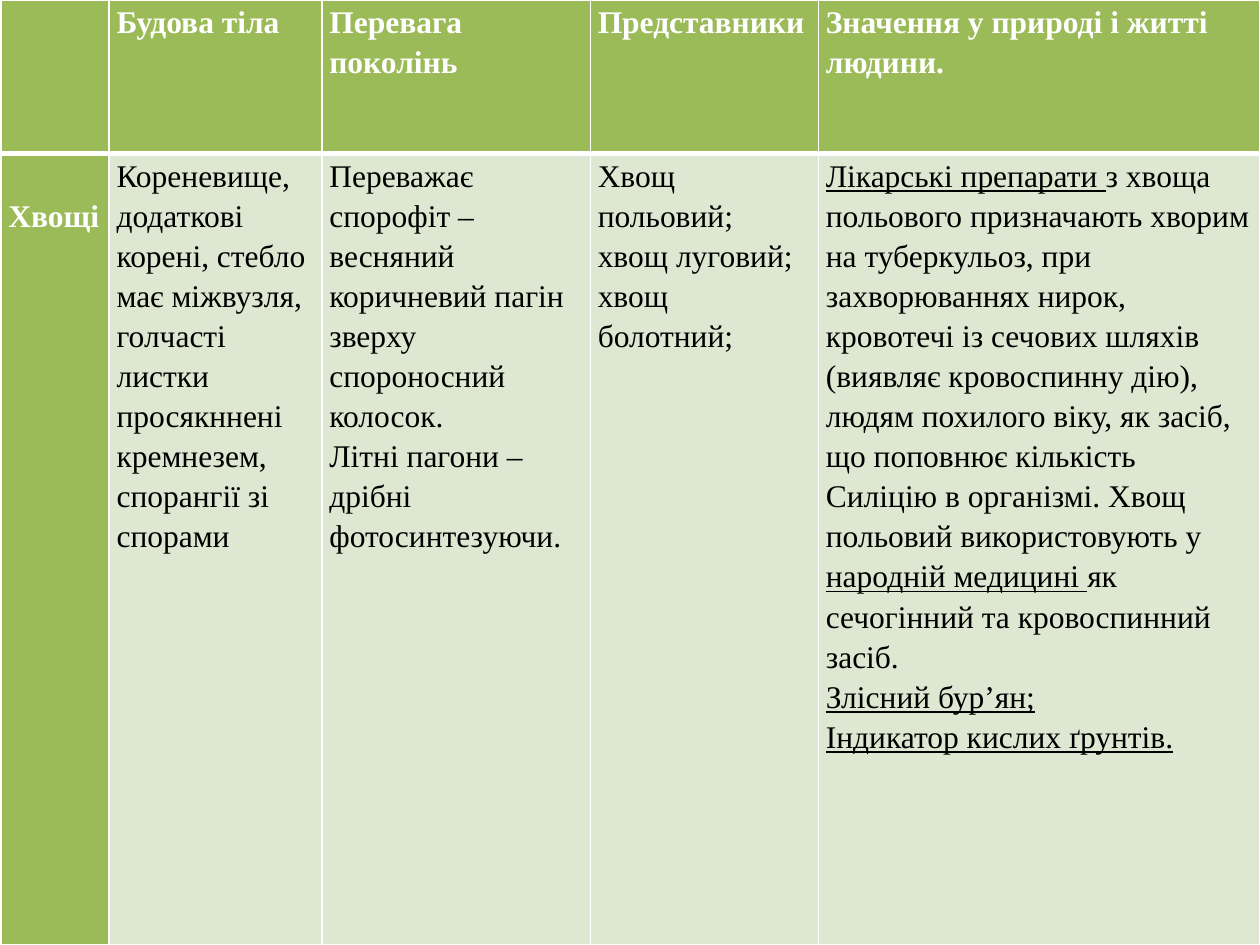
"""Build a one-slide table describing horsetails."""
from typing import NamedTuple

from lxml import etree
from pptx import Presentation
from pptx.dml.color import RGBColor
from pptx.enum.text import PP_ALIGN
from pptx.oxml.ns import qn
from pptx.util import Cm, Pt

JUSTIFY = PP_ALIGN.JUSTIFY
LEFT = PP_ALIGN.LEFT
WHITE = RGBColor(0xFF, 0xFF, 0xFF)
BLACK = RGBColor(0, 0, 0)
GREEN = RGBColor(0x9B, 0xBB, 0x59)
PALE_GREEN = RGBColor(0xDE, 0xE7, 0xD1)
FONT = "Times New Roman"
THIN, THICK = Pt(1), Pt(3)
COLUMN_WIDTHS = [Cm(2.18), Cm(4.29), Cm(5.41), Cm(4.6), Cm(8.89)]
ROW_HEIGHTS = [Cm(3.1), Cm(15.95)]


class Span(NamedTuple):
    text: str
    underline: bool = False


class Entry(NamedTuple):
    paragraphs: list[list[Span]]
    heading: bool = False
    align: PP_ALIGN = LEFT
    top_margin: Cm = Cm(0)


def heading(*lines: str) -> Entry:
    return Entry([[Span(line)] for line in lines], heading=True)


def body(*lines: str) -> Entry:
    return Entry([[Span(line)] for line in lines])


ROWS = [
    [
        heading(),
        heading("Будова тіла"),
        heading("Перевага", "поколінь"),
        heading("Представники"),
        heading("Значення у природі і житті людини."),
    ],
    [
        Entry([[Span("Хвощі")]], True, JUSTIFY, Cm(0.81)),
        body("Кореневище, додаткові корені, стебло має міжвузля, голчасті листки "
             "просякннені кремнезем, спорангії зі спорами"),
        body("Переважає спорофіт –весняний коричневий пагін зверху спороносний колосок.",
             "Літні пагони – дрібні фотосинтезуючи."),
        body("Хвощ польовий; хвощ луговий; хвощ болотний;"),
        Entry([
            [
                Span("Лікарські препарати ", True),
                Span("з хвоща польового призначають хворим на туберкульоз, при "
                     "захворюваннях нирок, кровотечі із сечових шляхів (виявляє "
                     "кровоспинну дію), людям похилого віку, як засіб, що поповнює "
                     "кількість Силіцію в організмі. Хвощ польовий використовують у "),
                Span("народній медицині ", True),
                Span("як сечогінний та кровоспинний засіб."),
            ],
            [Span("Злісний бур’ян;", True)],
            [Span("Індикатор кислих ґрунтів.", True)],
        ]),
    ],
]


def set_borders(cell, top: Pt, bottom: Pt) -> None:
    properties = cell._tc.get_or_add_tcPr()
    sides = [("a:lnL", THIN), ("a:lnR", THIN), ("a:lnT", top), ("a:lnB", bottom)]
    for position, (tag, width) in enumerate(sides):
        line = etree.Element(qn(tag), w=str(int(width)))
        fill = etree.SubElement(line, qn("a:solidFill"))
        etree.SubElement(fill, qn("a:srgbClr"), val=str(WHITE))
        properties.insert(position, line)


def fill_cell(cell, entry: Entry) -> None:
    cell.fill.solid()
    cell.fill.fore_color.rgb = GREEN if entry.heading else PALE_GREEN
    cell.margin_left = cell.margin_right = Cm(0.15)
    cell.margin_top, cell.margin_bottom = entry.top_margin, Cm(0)
    frame = cell.text_frame
    for index, spans in enumerate(entry.paragraphs):
        para = frame.add_paragraph() if index else frame.paragraphs[0]
        para.alignment = entry.align
        para.line_spacing = 1.15
        for span in spans:
            run = para.add_run()
            run.text = span.text
            run.font.name = FONT
            run.font.size = Pt(18)
            run.font.bold = entry.heading
            run.font.underline = span.underline
            run.font.color.rgb = WHITE if entry.heading else BLACK


def add_plant_table(page) -> None:
    table = page.shapes.add_table(
        len(ROWS), len(COLUMN_WIDTHS), Cm(0.02), Cm(0),
        sum(COLUMN_WIDTHS), sum(ROW_HEIGHTS)).table
    table.horz_banding = False
    for column, width in zip(table.columns, COLUMN_WIDTHS):
        column.width = width
    for row, height, entries in zip(table.rows, ROW_HEIGHTS, ROWS):
        row.height = height
        is_header = entries is ROWS[0]
        for cell, entry in zip(row.cells, entries):
            fill_cell(cell, entry)
            set_borders(cell, *((THIN, THICK) if is_header else (THICK, THIN)))


def main() -> None:
    deck = Presentation()
    deck.slide_width, deck.slide_height = Cm(25.4), Cm(19.05)
    page = deck.slides.add_slide(deck.slide_layouts[6])
    add_plant_table(page)
    deck.save("out.pptx")


if __name__ == "__main__":
    main()
